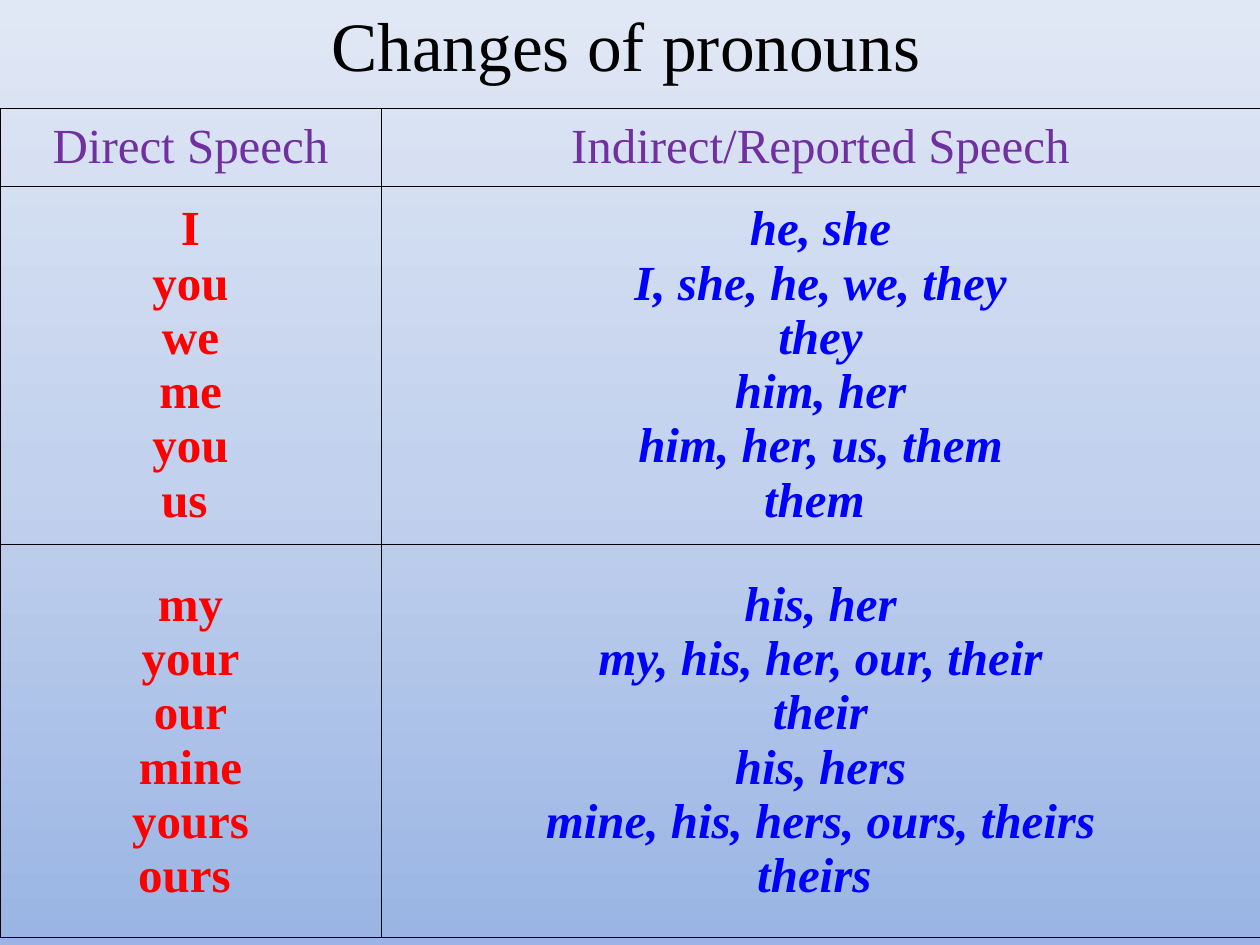
from copy import deepcopy

from lxml import etree
from pptx import Presentation, util as u
from pptx.dml.color import RGBColor
from pptx.enum import text
from pptx.oxml.ns import qn

SCALE = 914400 / 126
FONT = "Times New Roman"
INK = {
    "title": "000000", "head": "7030A0", "direct": "FF0000",
    "report": "0000FF", "line": "000000",
    "low": "9AB5E4", "mid": "C2D1ED", "high": "E1E8F5",
}
COLS = [381, 879]
ROWS = [78, 358, 393]
HEADS = ["Direct Speech", "Indirect/Reported Speech"]
GROUPS = [
    [("I", "he, she"),
     ("you", "I, she, he, we, they"),
     ("we", "they"),
     ("me", "him, her"),
     ("you", "him, her, us, them"),
     ("us ", "them ")],
    [("my", "his, her"),
     ("your", "my, his, her, our, their"),
     ("our", "their"),
     ("mine", "his, hers"),
     ("yours", "mine, his, hers, ours, theirs"),
     ("ours ", "theirs ")],
]


def px(n):
    return u.Emu(round(n * SCALE))


def rgb(name):
    return RGBColor.from_string(INK[name])


def write(frame, lines, size, ink, bold=False, italic=False):
    """Fill a text frame with centred paragraphs in one style."""
    for i, line in enumerate(lines):
        para = frame.paragraphs[0] if i == 0 else frame.add_paragraph()
        para.text = line
        para.alignment = text.PP_ALIGN.CENTER
        font = para.font
        font.name, font.size = FONT, u.Pt(size)
        font.bold, font.italic = bold, italic
        font.color.rgb = rgb(ink)


def shade(slide):
    """Give the slide a three-stop gradient that lightens upwards."""
    fill = slide.background.fill
    fill.gradient()
    fill.gradient_angle = 90
    stops = fill._fill._gradFill.find(qn("a:gsLst"))
    stops.insert(1, deepcopy(stops[0]))
    for stop, pos, ink in zip(fill.gradient_stops, (0, 0.5, 1),
                              ("low", "mid", "high")):
        stop.position = pos
        stop.color.rgb = rgb(ink)


def rule(cell):
    """Draw a thin line on all four sides of a cell without fill."""
    props = cell._tc.get_or_add_tcPr()
    for i, side in enumerate(("lnL", "lnR", "lnT", "lnB")):
        line = etree.Element(qn(f"a:{side}"), w=str(u.Pt(0.25)))
        solid = etree.SubElement(line, qn("a:solidFill"))
        etree.SubElement(solid, qn("a:srgbClr"), val=INK["line"])
        props.insert(i, line)


def title(slide, x, y, w, h):
    frame = slide.shapes.add_textbox(px(x), px(y), px(w), px(h)).text_frame
    frame.word_wrap = True
    frame.vertical_anchor = text.MSO_ANCHOR.MIDDLE
    write(frame, ["Changes of pronouns"], 39.6, "title")


def grid(slide, x, y):
    """Place the table of pronouns with its top left corner at x, y."""
    table = slide.shapes.add_table(len(ROWS), len(COLS), px(x), px(y),
                                   px(sum(COLS)), px(sum(ROWS))).table
    table.first_row = table.horz_banding = False
    for col, width in zip(table.columns, COLS):
        col.width = px(width)
    for row, height in zip(table.rows, ROWS):
        row.height = px(height)
    for cell in table.iter_cells():
        cell.fill.background()
        cell.vertical_anchor = text.MSO_ANCHOR.MIDDLE
        rule(cell)
    for c, head in enumerate(HEADS):
        write(table.cell(0, c).text_frame, [head], 28, "head")
    for r, group in enumerate(GROUPS, 1):
        direct, report = zip(*group)
        write(table.cell(r, 0).text_frame, direct, 28, "direct", bold=True)
        write(table.cell(r, 1).text_frame, report, 28, "report",
              bold=True, italic=True)


def main():
    deck = Presentation()
    deck.slide_width, deck.slide_height = px(1260), px(945)
    slide = deck.slides.add_slide(deck.slide_layouts[6])
    shade(slide)
    grid(slide, 0, 108)
    title(slide, 59, 0, 1134, 88)
    deck.save("out.pptx")


if __name__ == "__main__":
    main()
